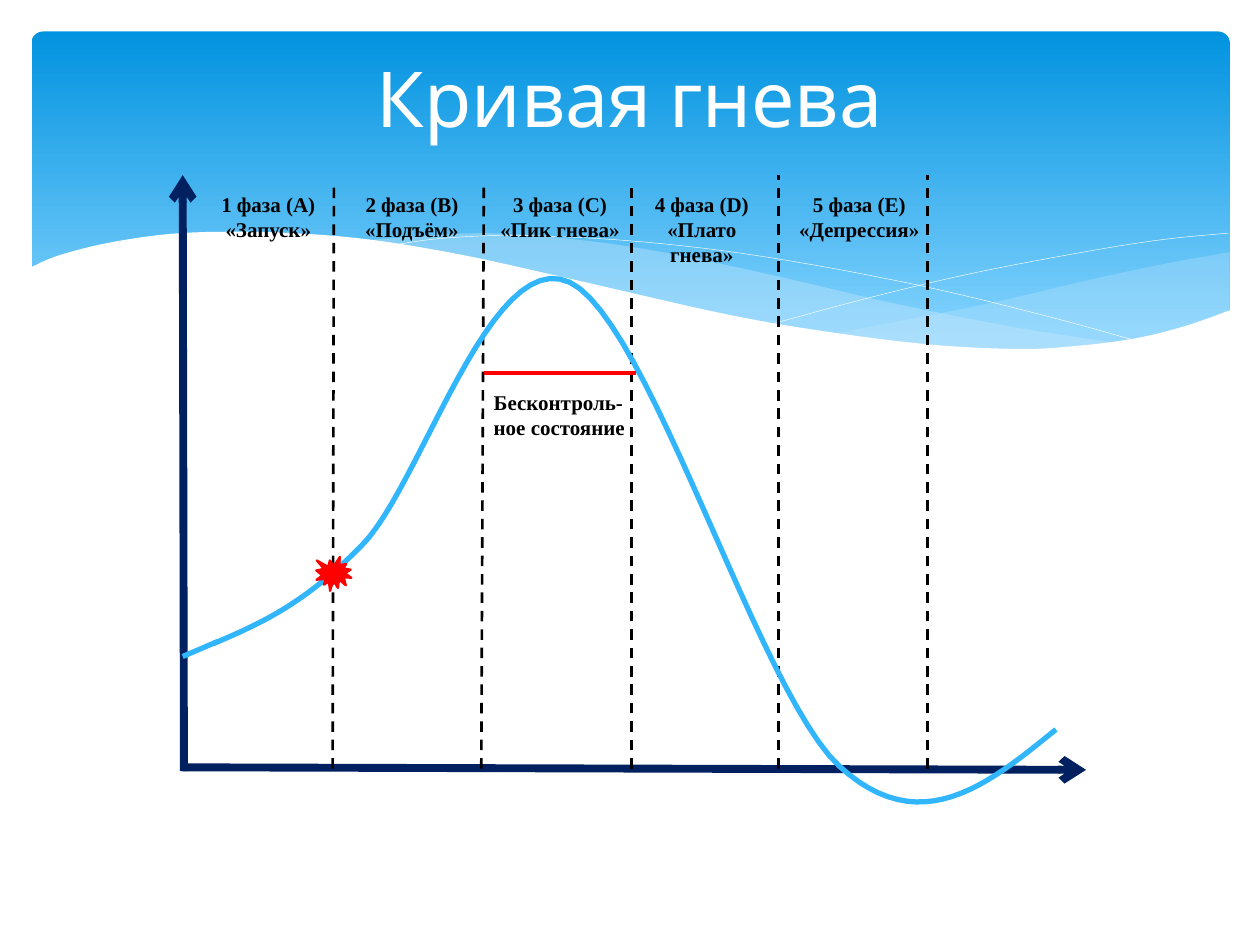
from dataclasses import dataclass
from typing import Optional

from lxml import etree
from pptx import Presentation
from pptx.dml.color import RGBColor
from pptx.enum.dml import MSO_LINE
from pptx.enum.shapes import MSO_CONNECTOR, MSO_SHAPE
from pptx.enum.text import MSO_ANCHOR, MSO_AUTO_SIZE, PP_ALIGN
from pptx.oxml.ns import qn
from pptx.util import Inches, Pt

STRAIGHT = MSO_CONNECTOR.STRAIGHT
ROUNDED = MSO_SHAPE.ROUNDED_RECTANGLE
BURST = MSO_SHAPE.EXPLOSION1
DASH = MSO_LINE.DASH
CENTER, LEFT = PP_ALIGN.CENTER, PP_ALIGN.LEFT

WHITE = RGBColor(0xFF, 0xFF, 0xFF)
BLACK = RGBColor(0x00, 0x00, 0x00)
RED = RGBColor(0xFF, 0x00, 0x00)
NAVY = RGBColor(0x00, 0x20, 0x60)
SKY = RGBColor(0x31, 0xB6, 0xFD)
BANNER_TOP = RGBColor(0x02, 0x93, 0xE0)
BANNER_BOTTOM = RGBColor(0x83, 0xD3, 0xFE)
HAZE = RGBColor(0xC6, 0xE7, 0xFC)

Point = tuple[float, float]


@dataclass
class Stroke:
    start: Point
    end: Point
    color: RGBColor
    width: float
    dashed: bool = False
    arrow: bool = False


@dataclass
class Outline:
    points: list[Point]
    fill: Optional[RGBColor] = None
    opacity: int = 100
    line: Optional[RGBColor] = None
    width: float = 0.25


@dataclass
class Label:
    left: float
    top: float
    width: float
    height: float
    lines: list[str]
    align: PP_ALIGN = CENTER


def bezier(a: Point, b: Point, c: Point, d: Point, steps: int) -> list[Point]:
    curve = []
    for step in range(1, steps + 1):
        t = step / steps
        weights = ((1 - t) ** 3, 3 * t * (1 - t) ** 2, 3 * t * t * (1 - t), t ** 3)
        curve.append(tuple(sum(w * p[i] for w, p in zip(weights, (a, b, c, d)))
                           for i in (0, 1)))
    return curve


def smooth(knots: list[Point]) -> list[Point]:
    padded = [knots[0], *knots, knots[-1]]
    curve = [knots[0]]
    for before, a, d, after in zip(padded, padded[1:], padded[2:], padded[3:]):
        b = tuple(a[i] + (d[i] - before[i]) / 6 for i in (0, 1))
        c = tuple(d[i] - (after[i] - a[i]) / 6 for i in (0, 1))
        curve += bezier(a, b, c, d, 6)
    return curve


def draw_outline(shapes, outline: Outline) -> None:
    points = [(Inches(x), Inches(y)) for x, y in outline.points]
    builder = shapes.build_freeform(*points[0])
    builder.add_line_segments(points[1:], close=outline.fill is not None)
    shape = builder.convert_to_shape()
    shape.shadow.inherit = False
    if outline.fill is None:
        shape.fill.background()
    else:
        shape.fill.solid()
        shape.fill.fore_color.rgb = outline.fill
        if outline.opacity < 100:
            color = shape.fill._xPr.find(".//" + qn("a:srgbClr"))
            etree.SubElement(color, qn("a:alpha"), val=str(outline.opacity * 1000))
    if outline.line is None:
        shape.line.fill.background()
    else:
        shape.line.color.rgb = outline.line
        shape.line.width = Pt(outline.width)


def draw_stroke(shapes, stroke: Stroke) -> None:
    ends = [Inches(v) for v in (*stroke.start, *stroke.end)]
    connector = shapes.add_connector(STRAIGHT, *ends)
    connector.line.color.rgb = stroke.color
    connector.line.width = Pt(stroke.width)
    if stroke.dashed:
        connector.line.dash_style = DASH
    if stroke.arrow:
        etree.SubElement(connector.line._get_or_add_ln(), qn("a:tailEnd"), type="arrow")
    etree.SubElement(connector._element.spPr, qn("a:effectLst"))


def draw_label(shapes, label: Label) -> None:
    box = [Inches(v) for v in (label.left, label.top, label.width, label.height)]
    frame = shapes.add_textbox(*box).text_frame
    frame.word_wrap = True
    frame.auto_size = MSO_AUTO_SIZE.SHAPE_TO_FIT_TEXT
    frame.text = "\n".join(label.lines)
    for paragraph in frame.paragraphs:
        paragraph.alignment = label.align
        paragraph.font.name = "Times New Roman"
        paragraph.font.size = Pt(12)
        paragraph.font.bold = True
        paragraph.font.color.rgb = BLACK


def draw_banner(shapes) -> None:
    banner = shapes.add_shape(ROUNDED, Inches(0.25), Inches(0.25), Inches(9.51), Inches(2.7))
    banner.adjustments[0] = 0.034
    banner.shadow.inherit = False
    banner.line.fill.background()
    banner.fill.gradient()
    banner.fill.gradient_angle = 270
    top, bottom = banner.fill.gradient_stops
    top.color.rgb, top.position = BANNER_TOP, 0
    bottom.color.rgb, bottom.position = BANNER_BOTTOM, 0.9


def draw_burst(shapes) -> None:
    burst = shapes.add_shape(BURST, Inches(2.51), Inches(4.42), Inches(0.28), Inches(0.27))
    burst.shadow.inherit = False
    burst.fill.solid()
    burst.fill.fore_color.rgb = RED
    burst.line.color.rgb = RED
    burst.line.width = Pt(1.25)


RIGHT_HAZE = (smooth([(9.76, 2), (9.21, 2.1), (8.61, 2.23), (7.79, 2.42), (6.61, 2.65)])
              + smooth([(6.61, 2.65), (7.19, 2.72), (8.03, 2.78), (8.72, 2.74),
                        (9.28, 2.63), (9.76, 2.47)]))
LONG_HAZE = (smooth([(8.93, 2.73), (8.07, 2.6), (7.06, 2.4), (6.29, 2.22), (5.41, 2.03),
                     (4.65, 1.91), (3.8, 1.85), (2.86, 1.91)])
             + smooth([(2.86, 1.91), (3.62, 2.03), (4.49, 2.22), (5.3, 2.4), (6.18, 2.58),
                       (6.95, 2.7), (7.61, 2.77), (8.28, 2.78), (8.93, 2.73)]))
FALLING_CREST = smooth([(3.09, 1.95), (3.53, 1.89), (4.16, 1.87), (5.1, 1.92),
                        (6.08, 2.04), (7.27, 2.26), (8.31, 2.51), (9.07, 2.72)])
RISING_CREST = smooth([(6.13, 2.57), (6.95, 2.35), (7.76, 2.16), (8.66, 1.99),
                       (9.24, 1.9), (9.75, 1.85)])
WHITE_WAVE = smooth([(9.77, 2.46), (9.4, 2.59), (8.99, 2.69), (8.5, 2.75), (8.09, 2.77),
                     (7.44, 2.74), (6.68, 2.65), (5.79, 2.5), (4.47, 2.2), (3.65, 2.02),
                     (2.92, 1.9), (2.3, 1.85), (1.77, 1.84), (1.32, 1.86), (0.85, 1.93),
                     (0.46, 2.03), (0.23, 2.13)]) + [(0.23, 3.29), (9.77, 3.29)]

BACKDROP = [
    Outline(RIGHT_HAZE, HAZE, 29),
    Outline(LONG_HAZE, HAZE, 40),
    Outline(FALLING_CREST, line=WHITE),
    Outline(RISING_CREST, line=WHITE),
    Outline(WHITE_WAVE, WHITE),
]

ANGER_KNOTS = [(1.69, 5.11), (2.04, 4.96), (2.4, 4.81), (2.87, 4.33), (3.34, 3.86),
               (3.89, 1.95), (4.52, 2.24), (5.15, 2.53), (6.02, 5.49), (6.66, 6.08),
               (7.3, 6.67), (7.84, 6.23), (8.38, 5.79)]
ANGER_CURVE = ANGER_KNOTS[:1] + [point for i in range(0, 12, 3)
                                 for point in bezier(*ANGER_KNOTS[i:i + 4], 24)]

AXES = [Stroke((1.46, 6.12), (1.45, 1.39), NAVY, 4.5, arrow=True),
        Stroke((1.45, 6.09), (8.62, 6.11), NAVY, 4.5, arrow=True)]
PHASE_BORDERS = [Stroke((bottom, 6.1), (top, start), BLACK, 1.5, dashed=True)
                 for bottom, top, start in [(2.64, 2.65, 1.45), (3.82, 3.84, 1.45),
                                            (5.01, 5.01, 1.45), (6.18, 6.18, 1.39),
                                            (7.36, 7.36, 1.39)]]
LABELS = [
    Label(1.6, 1.47, 1.06, 0.5, ["1 фаза (А) «Запуск»"]),
    Label(2.74, 1.47, 1.06, 0.5, ["2 фаза (B) «Подъём»"]),
    Label(3.84, 1.47, 1.21, 0.5, ["3 фаза (С) «Пик гнева»"]),
    Label(5.04, 1.47, 1.06, 0.71, ["4 фаза (D) «Плато гнева»"]),
    Label(6.19, 1.47, 1.26, 0.5, ["5 фаза (E) «Депрессия»"]),
    Label(3.82, 3.04, 1.34, 0.5, ["Бесконтроль-", "ное состояние"], LEFT),
]


def main() -> None:
    deck = Presentation()
    deck.slide_width, deck.slide_height = Inches(10), Inches(7.5)
    shapes = deck.slides.add_slide(deck.slide_layouts[5]).shapes

    draw_banner(shapes)
    for outline in BACKDROP:
        draw_outline(shapes, outline)

    title = shapes.title
    shapes._spTree.append(title._element)
    title.left, title.top = Inches(0.5), Inches(0.3)
    title.width, title.height = Inches(9), Inches(0.93)
    title.text_frame.text = "Кривая гнева"
    title.text_frame.vertical_anchor = MSO_ANCHOR.MIDDLE
    heading = title.text_frame.paragraphs[0]
    heading.alignment = CENTER
    heading.font.name = "Cabin"
    heading.font.size = Pt(44)
    heading.font.color.rgb = WHITE

    for stroke in AXES + PHASE_BORDERS:
        draw_stroke(shapes, stroke)
    for points in (ANGER_CURVE, [(1.73, 5.09), (1.45, 5.21)]):
        draw_outline(shapes, Outline(points, line=SKY, width=3))
    draw_burst(shapes)
    draw_stroke(shapes, Stroke((3.84, 2.96), (5.05, 2.96), RED, 2.25))
    for label in LABELS:
        draw_label(shapes, label)

    deck.save("out.pptx")


if __name__ == "__main__":
    main()
